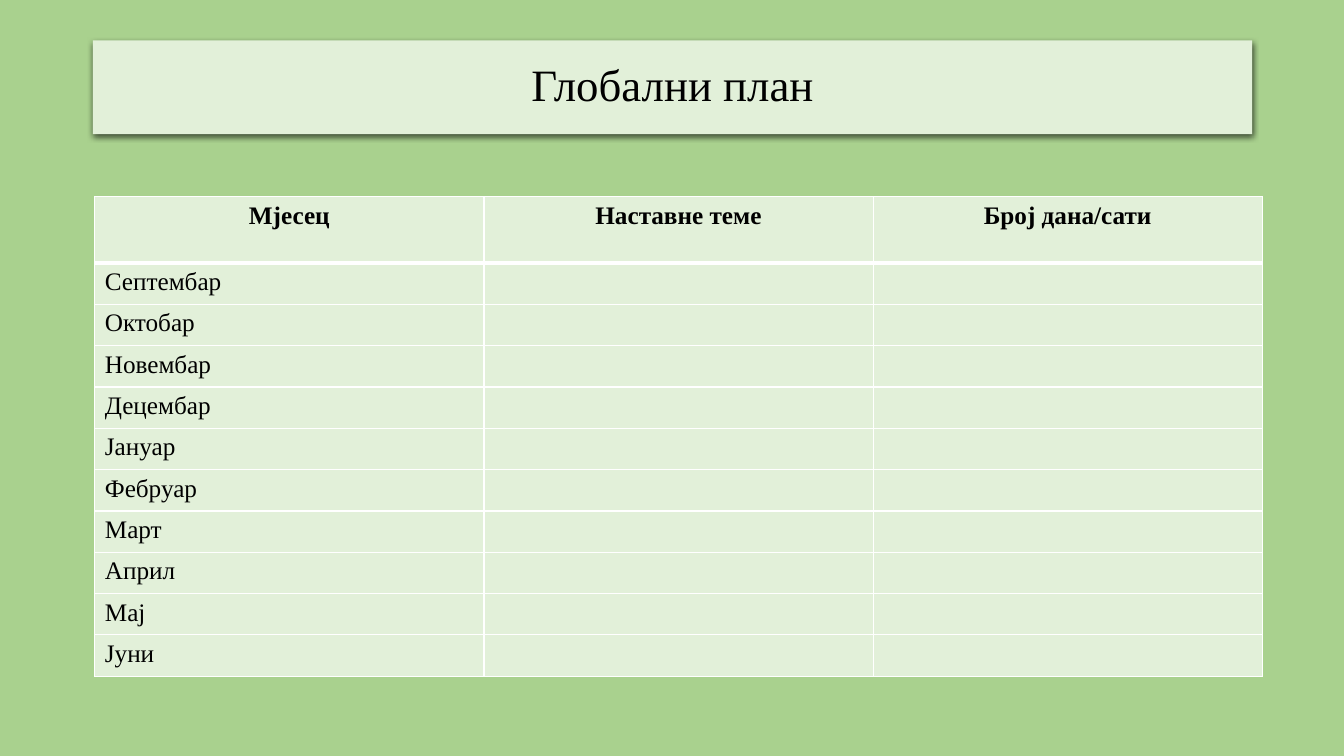
import dataclasses

import lxml.etree
import pptx
import pptx.dml.color
import pptx.enum.text
import pptx.oxml.ns
import pptx.util

Inches = pptx.util.Inches
Align = pptx.enum.text.PP_ALIGN


@dataclasses.dataclass(frozen=True)
class Theme:
    font: str = "Times New Roman"
    background: str = "A9D18E"
    panel: str = "E2F0D9"
    text: str = "000000"
    border: str = "FFFFFF"
    title_size: int = 32
    table_size: int = 18


@dataclasses.dataclass(frozen=True)
class TableRow:
    texts: tuple[str, ...]
    height: float = 0.41
    bold: bool = False
    align: Align = Align.LEFT
    bottom_border: float = 1


THEME = Theme()
HEADINGS = ("Мјесец", "Наставне теме", "Број дана/сати")
MONTHS = ("Септембар", "Октобар", "Новембар", "Децембар", "Јануар",
          "Фебруар", "Март", "Април", "Мај", "Јуни")
ROWS = [TableRow(HEADINGS, 0.66, True, Align.CENTER, 3)]
ROWS += [TableRow((month, "", "")) for month in MONTHS]
TABLE_LEFT, TABLE_TOP, COLUMN_WIDTH = 0.94, 1.95, 3.86


def rgb(value: str) -> pptx.dml.color.RGBColor:
    return pptx.dml.color.RGBColor.from_string(value)


def add_element(parent, tag: str, **attributes):
    return lxml.etree.SubElement(parent, pptx.oxml.ns.qn(tag), attributes)


def paint(target, color: str) -> None:
    target.fill.solid()
    target.fill.fore_color.rgb = rgb(color)


def write(para, text: str, size: int, align: Align, bold: bool = False) -> None:
    para.alignment = align
    span = para.add_run()
    span.text = text
    span.font.name = THEME.font
    span.font.size = pptx.util.Pt(size)
    span.font.bold = bold
    span.font.color.rgb = rgb(THEME.text)


def add_shadow(box) -> None:
    box.shadow.inherit = False
    effects = box.element.spPr.find(pptx.oxml.ns.qn("a:effectLst"))
    shadow = add_element(effects, "a:outerShdw", blurRad=str(pptx.util.Pt(4.5)),
                         dist=str(pptx.util.Pt(1.5)), dir="5400000",
                         algn="ctr", rotWithShape="0")
    color = add_element(shadow, "a:srgbClr", val=THEME.text)
    add_element(color, "a:alpha", val="63000")


def add_title(page, text: str) -> None:
    box = page.shapes.title
    box.left, box.top = Inches(0.92), Inches(0.4)
    box.width, box.height = Inches(11.5), Inches(0.93)
    paint(box, THEME.panel)
    box.line.fill.background()
    add_shadow(box)
    frame = box.text_frame
    frame.vertical_anchor = pptx.enum.text.MSO_ANCHOR.MIDDLE
    para = frame.paragraphs[0]
    para.line_spacing = 0.9
    write(para, text, THEME.title_size, Align.CENTER)


def add_borders(cell, widths: dict[str, float]) -> None:
    properties = cell._tc.get_or_add_tcPr()
    for side, width in widths.items():
        line = add_element(properties, f"a:ln{side}", w=str(pptx.util.Pt(width)))
        fill = add_element(line, "a:solidFill")
        add_element(fill, "a:srgbClr", val=THEME.border)


def add_plan_table(page, rows: list[TableRow]) -> None:
    count = len(HEADINGS)
    table = page.shapes.add_table(
        len(rows), count, Inches(TABLE_LEFT), Inches(TABLE_TOP),
        Inches(COLUMN_WIDTH * count), Inches(sum(row.height for row in rows))).table
    for column in table.columns:
        column.width = Inches(COLUMN_WIDTH)
    top_border = 1
    for index, row in enumerate(rows):
        table.rows[index].height = Inches(row.height)
        for cell, text in zip(table.rows[index].cells, row.texts):
            add_borders(cell, {"L": 1, "R": 1, "T": top_border, "B": row.bottom_border})
            paint(cell, THEME.panel)
            if text:
                write(cell.text_frame.paragraphs[0], text, THEME.table_size,
                      row.align, row.bold)
        top_border = row.bottom_border


def main() -> None:
    # Deck and page
    deck = pptx.Presentation()
    deck.slide_width, deck.slide_height = Inches(13.33), Inches(7.5)
    page = deck.slides.add_slide(deck.slide_layouts.get_by_name("Title Only"))
    paint(page.background, THEME.background)

    # Title panel and yearly plan
    add_title(page, "Глобални план")
    add_plan_table(page, ROWS)
    deck.save("out.pptx")


if __name__ == "__main__":
    main()
